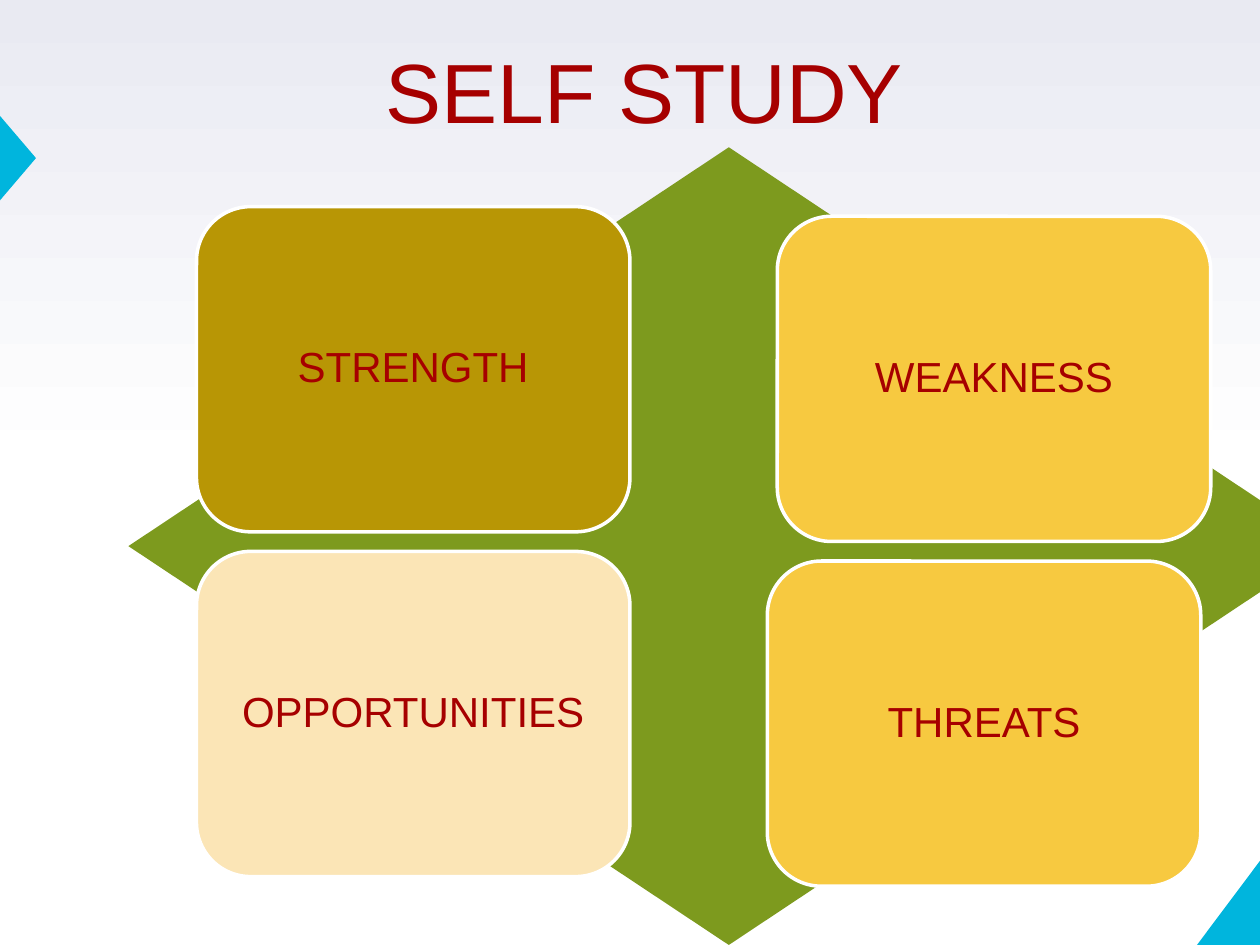
from dataclasses import dataclass

from pptx import Presentation
from pptx import util as u
from pptx.dml import color
from pptx.enum import shapes, text


@dataclass(frozen=True)
class Theme:
    """Colours, font and type sizes of the slide."""
    font: str = "Arial"
    ink: str = "A60000"
    accent: str = "00B5DD"
    diamond: str = "7D9A1E"
    dark_gold: str = "B89605"
    gold: str = "F7C940"
    cream: str = "FBE5B6"
    white: str = "FFFFFF"
    mist: str = "E9EAF2"
    title_size: float = 48
    label_size: float = 24


THEME = Theme()
KIND = shapes.MSO_SHAPE
BOX_SIZE = (247.7, 185.8)
ROW_STEP = 197


def rgb(value):
    """Return a colour from its hex value."""
    return color.RGBColor.from_string(value)


def apply(target, formats):
    """Set each attribute named in a dict of format values."""
    for name, value in formats.items():
        setattr(target, name, value)


def add_shape(s, kind, box, fill, line=None):
    """Add a flat preset shape, outlined only when a line colour is given."""
    sp = s.shapes.add_shape(kind, *map(u.Pt, box))
    sp.shadow.inherit = False
    sp.fill.solid()
    sp.fill.fore_color.rgb = rgb(fill)
    if line:
        sp.line.color.rgb = rgb(line)
        sp.line.width = u.Pt(2)
    else:
        sp.line.fill.background()
    return sp


def write(sp, wording, size, spacing, inset, anchor):
    """Write one centred line of text into a shape."""
    tf = sp.text_frame
    margins = {f"margin_{side}": u.Pt(inset)
               for side in ("left", "top", "right", "bottom")}
    apply(tf, {"word_wrap": True, "vertical_anchor": anchor, **margins})
    p = tf.paragraphs[0]
    apply(p, {"alignment": text.PP_ALIGN.CENTER, "line_spacing": spacing})
    r = p.add_run()
    r.text = wording
    apply(r.font, {"name": THEME.font, "size": u.Pt(size)})
    r.font.color.rgb = rgb(THEME.ink)


def add_title(s, wording):
    """Add the slide title."""
    sp = s.shapes.add_textbox(*map(u.Pt, (146.2, 33.8, 444.2, 113.8)))
    write(sp, wording, THEME.title_size, 0.8, 0, text.MSO_ANCHOR.TOP)


def add_quadrant(s, wording, left, top, fill):
    """Add one labelled rounded box."""
    sp = add_shape(s, KIND.ROUNDED_RECTANGLE, (left, top, *BOX_SIZE),
                   fill, THEME.white)
    write(sp, wording, THEME.label_size, 0.9, 7.2, text.MSO_ANCHOR.MIDDLE)


def paint_background(s):
    """Fill the background, white below and fading to mist at the top."""
    fill = s.background.fill
    fill.gradient()
    fill.gradient_angle = 90
    stops = ((0.5, THEME.white), (1, THEME.mist))
    for stop, (position, value) in zip(fill.gradient_stops, stops):
        stop.position = position
        stop.color.rgb = rgb(value)


def add_decor(s):
    """Add the two accent triangles at the slide edges."""
    corner = add_shape(s, KIND.RIGHT_TRIANGLE, (684, 491, 36.7, 49),
                       THEME.accent)
    corner.element.spPr.xfrm.set("flipH", "1")
    edge = add_shape(s, KIND.ISOSCELES_TRIANGLE, (-14.4, 79.9, 49, 20.9),
                     THEME.accent)
    edge.rotation = 90


def main():
    """Build the slide and save it."""
    prs = Presentation()
    apply(prs, {"slide_width": u.Pt(720), "slide_height": u.Pt(540)})
    s = prs.slides.add_slide(prs.slide_layouts[6])
    paint_background(s)
    add_decor(s)
    add_title(s, "SELF STUDY")
    add_shape(s, KIND.DIAMOND, (73.4, 84.2, 686.2, 455.8), THEME.diamond)
    quadrants = (
        ("STRENGTH", 112.3, 118.1, THEME.dark_gold),
        ("WEAKNESS", 444.2, 123.6, THEME.gold),
        ("OPPORTUNITIES", 112.3, 118.1 + ROW_STEP, THEME.cream),
        ("THREATS", 438.5, 123.6 + ROW_STEP, THEME.gold),
    )
    for quadrant in quadrants:
        add_quadrant(s, *quadrant)
    prs.save("out.pptx")


if __name__ == "__main__":
    main()
